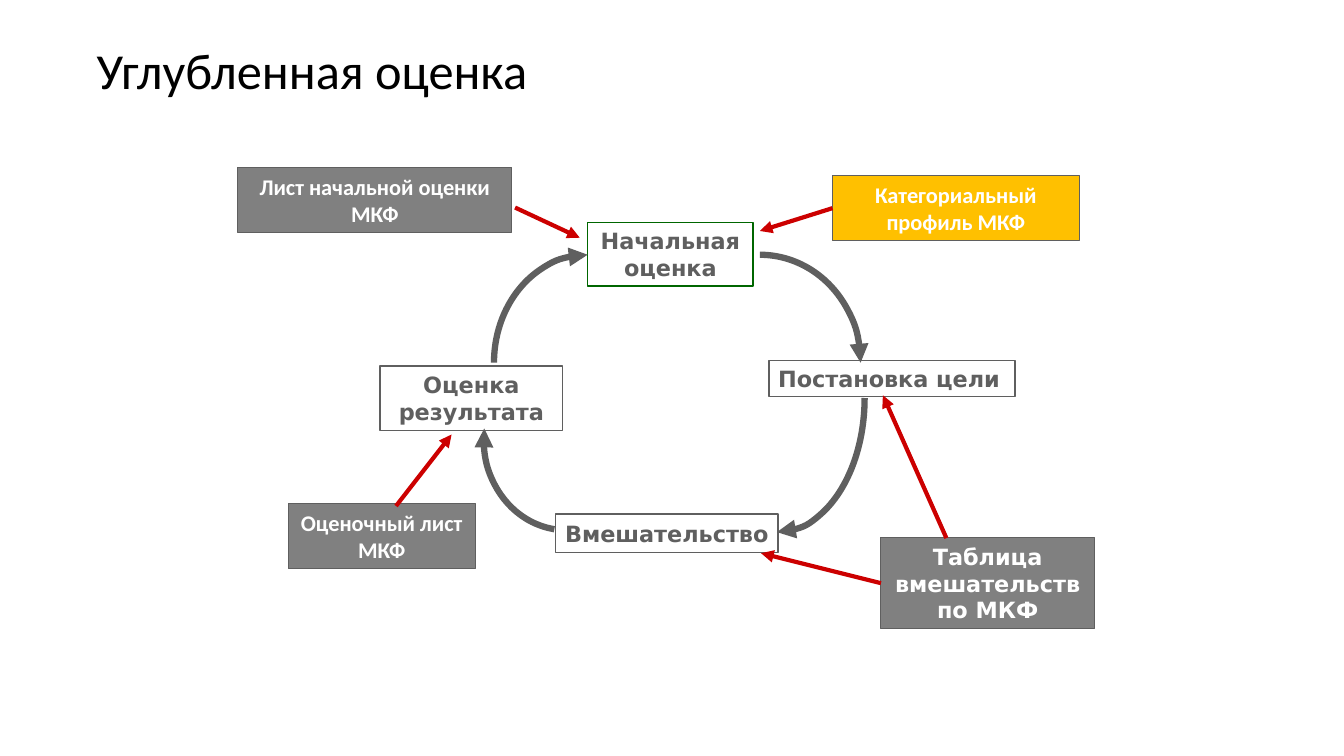
from dataclasses import dataclass

from lxml.etree import SubElement
from pptx import Presentation
from pptx.dml.color import RGBColor as Rgb
from pptx.enum.shapes import MSO_CONNECTOR as Connector, MSO_SHAPE as Shape
from pptx.enum.text import MSO_ANCHOR as Anchor, PP_ALIGN as Align
from pptx.oxml.ns import qn
from pptx.util import Cm, Pt


@dataclass(frozen=True)
class Theme:
    ink: Rgb = Rgb(0x00, 0x00, 0x00)
    white: Rgb = Rgb(0xFF, 0xFF, 0xFF)
    cycle: Rgb = Rgb(0x5F, 0x5F, 0x5F)
    start: Rgb = Rgb(0x00, 0x66, 0x00)
    tool: Rgb = Rgb(0x80, 0x80, 0x80)
    profile: Rgb = Rgb(0xFF, 0xC0, 0x00)
    pointer: Rgb = Rgb(0xCC, 0x00, 0x00)
    body_font: str = "Calibri"
    cycle_font: str = "DejaVu Sans"
    title_size: Pt = Pt(36)
    label_size: Pt = Pt(16)
    stage_line: Pt = Pt(1)
    tool_line: Pt = Pt(0.75)
    pointer_line: Pt = Pt(3)
    cycle_line: Pt = Pt(4.5)


THEME = Theme()


def set_title(slide, text):
    title = slide.shapes.title
    title.left, title.top, title.width, title.height = Cm(2.18), Cm(0), Cm(32.56), Cm(3.68)
    frame = title.text_frame
    frame.text = text
    frame.vertical_anchor = Anchor.MIDDLE
    heading = frame.paragraphs[0]
    heading.alignment = Align.LEFT
    heading.line_spacing = 0.9
    heading.font.name = THEME.body_font
    heading.font.size = THEME.title_size
    heading.font.color.rgb = THEME.ink


def add_box(slide, text, place, font, color, line, line_width, fill=None, align=Align.CENTER):
    box = slide.shapes.add_shape(Shape.RECTANGLE, *map(Cm, place))
    box.shadow.inherit = False
    if fill is None:
        box.fill.background()
    else:
        box.fill.solid()
        box.fill.fore_color.rgb = fill
    box.line.color.rgb = line
    box.line.width = line_width
    frame = box.text_frame
    frame.word_wrap = True
    frame.vertical_anchor = Anchor.MIDDLE
    frame.margin_left = frame.margin_right = Cm(0.23)
    frame.margin_top = frame.margin_bottom = Cm(0.13)
    frame.text = text
    label = frame.paragraphs[0]
    label.alignment = align
    label.font.name = font
    label.font.size = THEME.label_size
    label.font.bold = True
    label.font.color.rgb = color
    return box


def add_stage(slide, text, place, line=THEME.cycle, align=Align.CENTER):
    return add_box(slide, text, place, THEME.cycle_font, THEME.cycle, line,
                   THEME.stage_line, align=align)


def add_tool(slide, text, place, fill=THEME.tool, font=THEME.body_font):
    return add_box(slide, text, place, font, THEME.white, THEME.cycle,
                   THEME.tool_line, fill=fill)


def style_arrow(arrow, color, width):
    arrow.line.color.rgb = color
    arrow.line.width = width
    SubElement(arrow.line._get_or_add_ln(), qn("a:tailEnd"), type="triangle")


def add_cycle_arrow(slide, center, radii, start_angle):
    (x, y), (rx, ry) = center, radii
    arc = slide.shapes.add_shape(Shape.ARC, Cm(x - rx), Cm(y - ry), Cm(2 * rx), Cm(2 * ry))
    arc.shadow.inherit = False
    arc.fill.background()
    for index, angle in enumerate((start_angle, start_angle + 90)):
        arc.adjustments[index] = angle % 360 * 0.6
    style_arrow(arc, THEME.cycle, THEME.cycle_line)


def add_pointer(slide, start, end, source=None):
    pointer = slide.shapes.add_connector(Connector.STRAIGHT, *map(Cm, start + end))
    if source is not None:
        pointer.begin_connect(source, 1)
    style_arrow(pointer, THEME.pointer, THEME.pointer_line)
    SubElement(pointer._element.spPr, qn("a:effectLst"))


def main():
    deck = Presentation()
    deck.slide_width, deck.slide_height = Cm(33.87), Cm(19.05)
    slide = deck.slides.add_slide(deck.slide_layouts[5])
    set_title(slide, "Углубленная оценка")

    add_stage(slide, "Начальная\vоценка", (14.81, 5.61, 4.17, 1.6), line=THEME.start)
    add_stage(slide, "Постановка цели", (19.38, 9.09, 6.2, 0.91), align=Align.LEFT)
    add_stage(slide, "Вмешательство", (14, 12.95, 5.61, 0.97))
    add_stage(slide, "Оценка результата", (9.58, 9.22, 4.6, 1.63))

    add_cycle_arrow(slide, (19.15, 9.14), (2.54, 2.72), 270)
    add_cycle_arrow(slide, (19.58, 10.03), (2.21, 3.38), 0)
    add_cycle_arrow(slide, (14.27, 11.07), (2.08, 2.29), 97.5)
    add_cycle_arrow(slide, (14.81, 9.14), (2.36, 2.72), 180)

    profile = add_tool(slide, "Категориальный профиль МКФ", (20.98, 4.42, 6.22, 1.65),
                       fill=THEME.profile)
    add_tool(slide, "Лист начальной оценки МКФ", (5.99, 4.22, 6.91, 1.63))
    interventions = add_tool(slide, "Таблица вмешательств по МКФ", (22.2, 13.54, 5.38, 2.31),
                             font=THEME.cycle_font)
    add_tool(slide, "Оценочный лист МКФ", (7.26, 12.7, 4.72, 1.63))

    add_pointer(slide, (12.98, 5.23), (14.61, 5.99))
    add_pointer(slide, (20.98, 5.25), (19.15, 5.82), profile)
    add_pointer(slide, (22.2, 14.7), (19.18, 13.94), interventions)
    add_pointer(slide, (23.85, 13.56), (22.25, 9.96))
    add_pointer(slide, (9.98, 12.75), (11.38, 10.95))

    deck.save("out.pptx")


if __name__ == "__main__":
    main()
